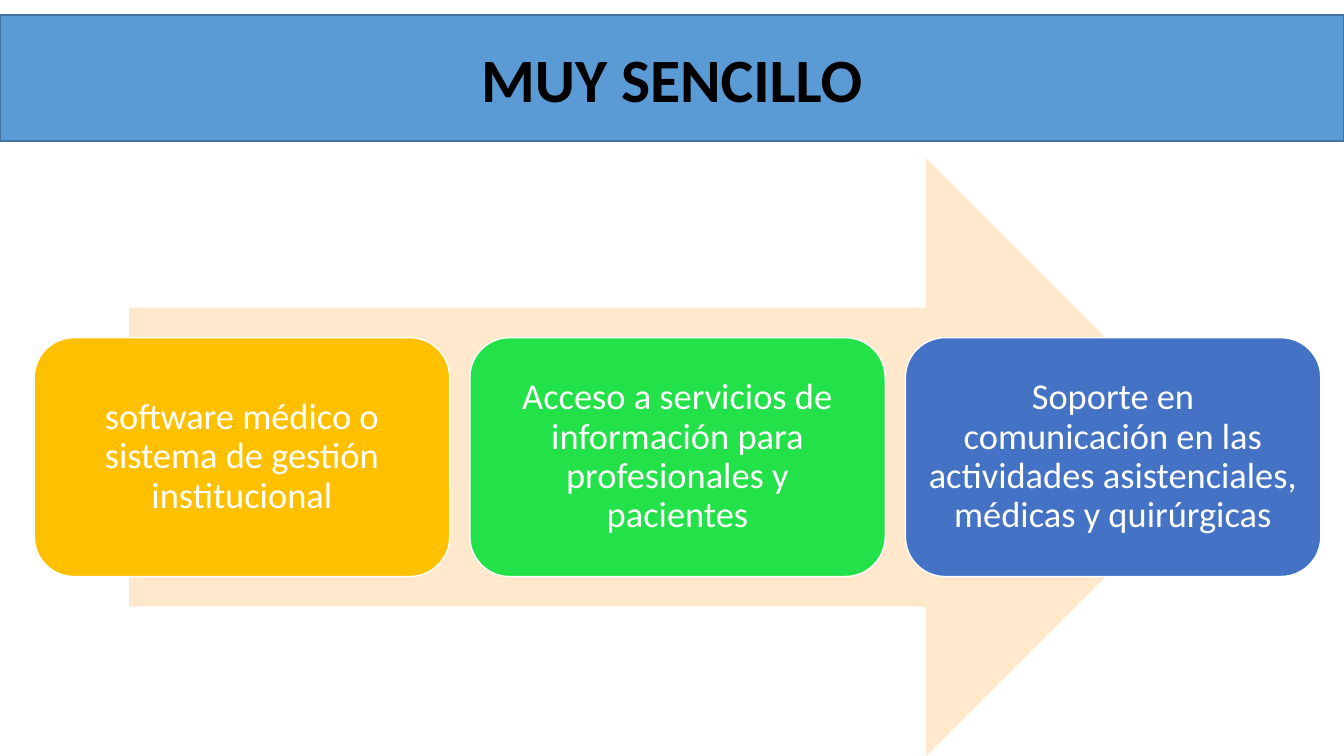
from dataclasses import dataclass

from pptx import Presentation
from pptx.dml.color import RGBColor
from pptx.enum.shapes import MSO_SHAPE
from pptx.enum.text import MSO_ANCHOR, MSO_AUTO_SIZE, PP_ALIGN
from pptx.util import Inches, Pt

ARROW = MSO_SHAPE.RIGHT_ARROW
ROUNDED = MSO_SHAPE.ROUNDED_RECTANGLE
MIDDLE = MSO_ANCHOR.MIDDLE
CENTER = PP_ALIGN.CENTER
NO_AUTOFIT = MSO_AUTO_SIZE.NONE
TITLE_ONLY = 5


@dataclass(frozen=True)
class Theme:
    font: str = "Calibri"
    title_size: int = 44
    card_size: int = 26
    line_width: int = 1
    title_text: str = "000000"
    title_fill: str = "5B9BD5"
    title_line: str = "43739E"
    arrow: str = "FFE8CC"
    white: str = "FFFFFF"
    gold: str = "FFC000"
    green: str = "23E148"
    blue: str = "4472C4"


class SlideBuilder:
    def __init__(self, slide, theme):
        self.s = slide
        self.theme = theme

    def paint(self, sp, fill, line=None):
        sp.fill.solid()
        sp.fill.fore_color.rgb = RGBColor.from_string(fill)
        if line:
            sp.line.color.rgb = RGBColor.from_string(line)
            sp.line.width = Pt(self.theme.line_width)
        else:
            sp.line.fill.background()

    def set_text(self, sp, text, size, color, inset, bold=False, spacing=1.0):
        tf = sp.text_frame
        tf.word_wrap = True
        tf.auto_size = NO_AUTOFIT
        tf.vertical_anchor = MIDDLE
        tf.margin_left = tf.margin_right = Inches(inset)
        tf.margin_top = tf.margin_bottom = Inches(inset)
        p = tf.paragraphs[0]
        p.alignment = CENTER
        p.line_spacing = spacing
        r = p.add_run()
        r.text = text
        r.font.name = self.theme.font
        r.font.size = Pt(size)
        r.font.bold = bold
        r.font.color.rgb = RGBColor.from_string(color)

    def title(self, text, x, y, w, h):
        t = self.theme
        sp = self.s.shapes.title
        sp.left, sp.top, sp.width, sp.height = map(Inches, (x, y, w, h))
        self.paint(sp, t.title_fill, t.title_line)
        self.set_text(sp, text, t.title_size, t.title_text, 0.1, bold=True)

    def shape(self, kind, x, y, w, h, fill, line=None):
        sp = self.s.shapes.add_shape(kind, *map(Inches, (x, y, w, h)))
        sp.shadow.inherit = False
        self.paint(sp, fill, line)
        return sp

    def arrow(self, x, y, w, h):
        self.shape(ARROW, x, y, w, h, self.theme.arrow)

    def card(self, text, x, y, w, h, fill):
        t = self.theme
        sp = self.shape(ROUNDED, x, y, w, h, fill, t.white)
        self.set_text(sp, text, t.card_size, t.white, 0.11, spacing=0.9)


def main():
    theme = Theme()
    prs = Presentation()
    prs.slide_width = Inches(13.33)
    prs.slide_height = Inches(7.5)
    slide = SlideBuilder(
        prs.slides.add_slide(prs.slide_layouts[TITLE_ONLY]), theme)

    slide.title("MUY SENCILLO", 0, 0.15, 13.33, 1.25)
    slide.arrow(1.28, 1.57, 10.87, 5.93)

    cards = [
        ("software médico o sistema de gestión institucional", theme.gold),
        ("Acceso a servicios de información para profesionales y pacientes",
         theme.green),
        ("Soporte en comunicación en las actividades asistenciales, "
         "médicas y quirúrgicas", theme.blue),
    ]
    left, width, gap = 0.34, 4.12, 0.2
    for i, (text, fill) in enumerate(cards):
        slide.card(text, left + i * (width + gap), 3.35, width, 2.37, fill)

    prs.save("out.pptx")


if __name__ == "__main__":
    main()
